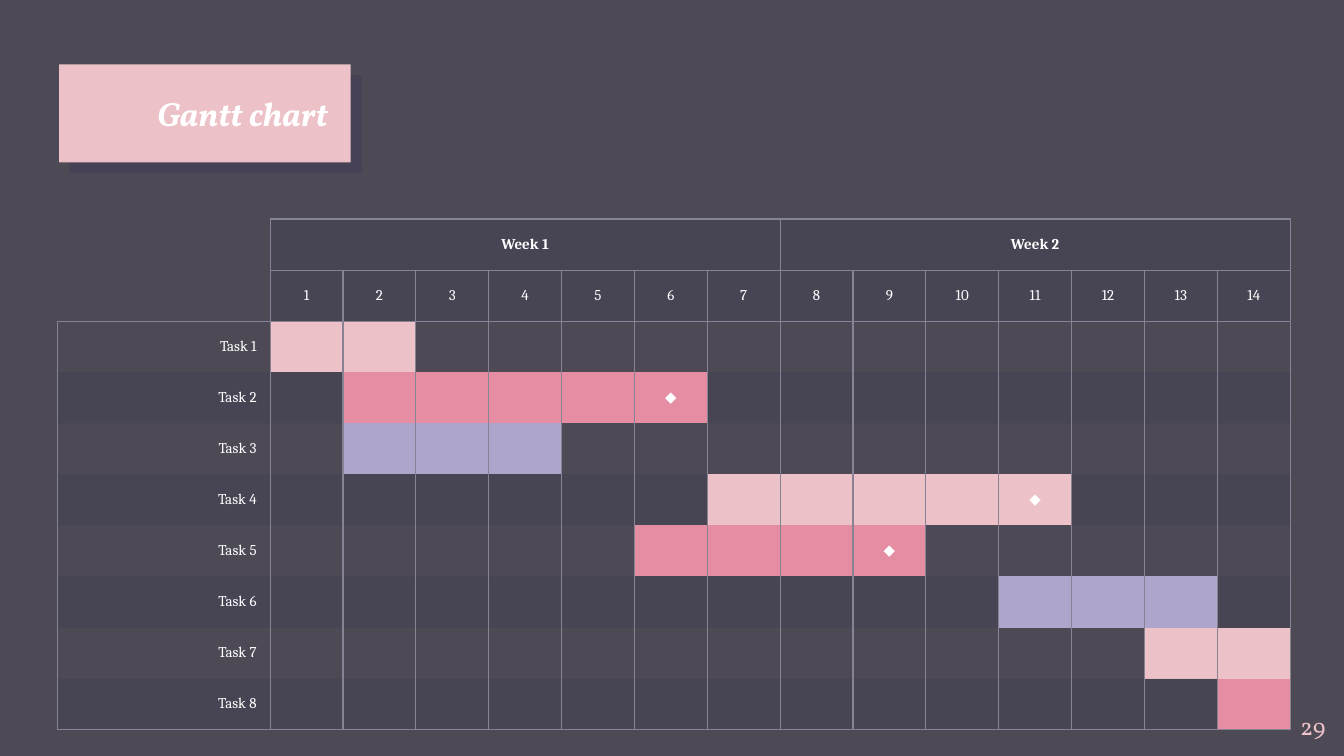
from lxml.etree import SubElement
from pptx import Presentation
from pptx.dml.color import RGBColor
from pptx.enum.shapes import MSO_SHAPE
from pptx.enum.text import MSO_ANCHOR, PP_ALIGN
from pptx.oxml.ns import qn
from pptx.util import Inches, Pt

COLORS = {
    "background": "4D4A56",
    "pink": "ECC1C8",
    "rose": "E48DA3",
    "lilac": "AEA4CC",
    "band": "1B1B46",
    "border": "888394",
    "shadow": "20124D",
    "white": "FFFFFF",
}
TASKS = [
    (1, 2, "pink", False),
    (2, 6, "rose", True),
    (2, 4, "lilac", False),
    (7, 11, "pink", True),
    (6, 9, "rose", True),
    (11, 13, "lilac", False),
    (13, 14, "pink", False),
    (14, 14, "rose", False),
]
WEEKS = 2
DAYS_PER_WEEK = 7
DAYS = WEEKS * DAYS_PER_WEEK
HEADER_ROWS = 2
NO_STYLE = "{2D5ABB26-0587-4C30-8999-92F81FD0307C}"


def color(name):
    return RGBColor.from_string(COLORS[name])


def write(frame, text, font, size, ink, align, bold=False, italic=False):
    frame.text = text
    para = frame.paragraphs[0]
    para.alignment = align
    for span in para.runs:
        span.font.name = font
        span.font.size = Pt(size)
        span.font.bold = bold
        span.font.italic = italic
        span.font.color.rgb = color(ink)


def add_text(page, text, left, top, width, height, size, ink, inset, anchor, **style):
    box = page.shapes.add_textbox(Inches(left), Inches(top), Inches(width), Inches(height))
    frame = box.text_frame
    frame.word_wrap = True
    frame.vertical_anchor = anchor
    frame.margin_left = frame.margin_right = Inches(inset)
    frame.margin_top = frame.margin_bottom = Inches(inset)
    write(frame, text, "Vollkorn", size, ink, PP_ALIGN.RIGHT, **style)


def add_title_panel(page):
    panel = page.shapes.add_shape(
        MSO_SHAPE.RECTANGLE, Inches(0.44), Inches(0.48), Inches(2.17), Inches(0.73))
    panel.fill.solid()
    panel.fill.fore_color.rgb = color("pink")
    panel.line.fill.background()
    panel.shadow.inherit = False
    effects = panel._element.spPr.find(qn("a:effectLst"))
    shadow = SubElement(effects, qn("a:outerShdw"), blurRad="0", dist=str(Pt(8.2)),
                        dir=str(45 * 60000), algn="bl", rotWithShape="0")
    tint = SubElement(shadow, qn("a:srgbClr"), val=COLORS["shadow"])
    SubElement(tint, qn("a:alpha"), val="15000")


def set_borders(cell, sides):
    properties = cell._tc.get_or_add_tcPr()
    for side in "LRTB":
        line = SubElement(properties, qn(f"a:ln{side}"), w=str(Pt(0.75)))
        if side in sides:
            fill = SubElement(line, qn("a:solidFill"))
            SubElement(fill, qn("a:srgbClr"), val=COLORS["border"])
        else:
            SubElement(line, qn("a:noFill"))


def set_fill(cell, name):
    if name is None:
        cell.fill.background()
        return
    cell.fill.solid()
    cell.fill.fore_color.rgb = color(name)
    if name == "band":
        tint = cell._tc.tcPr.find(qn("a:solidFill")).find(qn("a:srgbClr"))
        SubElement(tint, qn("a:alpha"), val="10000")


def style_cell(cell, sides, fill=None, text="", align=PP_ALIGN.CENTER, bold=False):
    set_borders(cell, sides)
    set_fill(cell, fill)
    cell.vertical_anchor = MSO_ANCHOR.MIDDLE
    if text:
        write(cell.text_frame, text, "Cambria", 8, "white", align, bold)
    else:
        cell.margin_top = cell.margin_bottom = 0


def fill_header(table):
    style_cell(table.cell(0, 0), "R")
    style_cell(table.cell(1, 0), "RB")
    for week in range(WEEKS):
        first = 1 + week * DAYS_PER_WEEK
        last = first + DAYS_PER_WEEK - 1
        cell = table.cell(0, first)
        cell.merge(table.cell(0, last))
        style_cell(cell, "LRTB", "band", f"Week {week + 1}", bold=True)
        for day in range(first + 1, last + 1):
            spanned = table.cell(0, day)
            spanned.margin_top = spanned.margin_bottom = 0
    for day in range(1, DAYS + 1):
        style_cell(table.cell(1, day), "LRTB", "band", str(day))


def fill_task(table, number, start, end, bar, milestone):
    row = HEADER_ROWS + number - 1
    sides = "LR"
    if number == 1:
        sides += "T"
    if number == len(TASKS):
        sides += "B"
    band = "band" if number % 2 == 0 else None
    style_cell(table.cell(row, 0), sides, band, f"Task {number}", PP_ALIGN.RIGHT)
    for day in range(1, DAYS + 1):
        fill = bar if start <= day <= end else band
        mark = "◆" if milestone and day == end else ""
        style_cell(table.cell(row, day), sides, fill, mark)


def add_gantt(page):
    rows = HEADER_ROWS + len(TASKS)
    label_width, days_width, row_height = Inches(1.58), Inches(7.59), Inches(0.38)
    frame = page.shapes.add_table(rows, DAYS + 1, Inches(0.43), Inches(1.63),
                                  label_width + days_width, row_height * rows)
    table = frame.table
    table.first_row = False
    table.horz_banding = False
    table._tbl.tblPr.find(qn("a:tableStyleId")).text = NO_STYLE
    for index, column in enumerate(table.columns):
        column.width = days_width // DAYS if index else label_width
    for row in table.rows:
        row.height = row_height
    fill_header(table)
    for number, task in enumerate(TASKS, 1):
        fill_task(table, number, *task)


def main():
    deck = Presentation()
    deck.slide_width = Inches(10)
    deck.slide_height = deck.slide_width * 9 // 16
    page = deck.slides.add_slide(deck.slide_layouts[6])
    page.background.fill.solid()
    page.background.fill.fore_color.rgb = color("background")
    add_title_panel(page)
    add_text(page, "Gantt chart", 0.44, 0.48, 2, 0.73, 18, "white", 0,
             MSO_ANCHOR.MIDDLE, bold=True, italic=True)
    add_text(page, "29", 9.36, 5.19, 0.6, 0.43, 13, "pink", 0.1, MSO_ANCHOR.TOP)
    add_gantt(page)
    deck.save("out.pptx")


if __name__ == "__main__":
    main()
